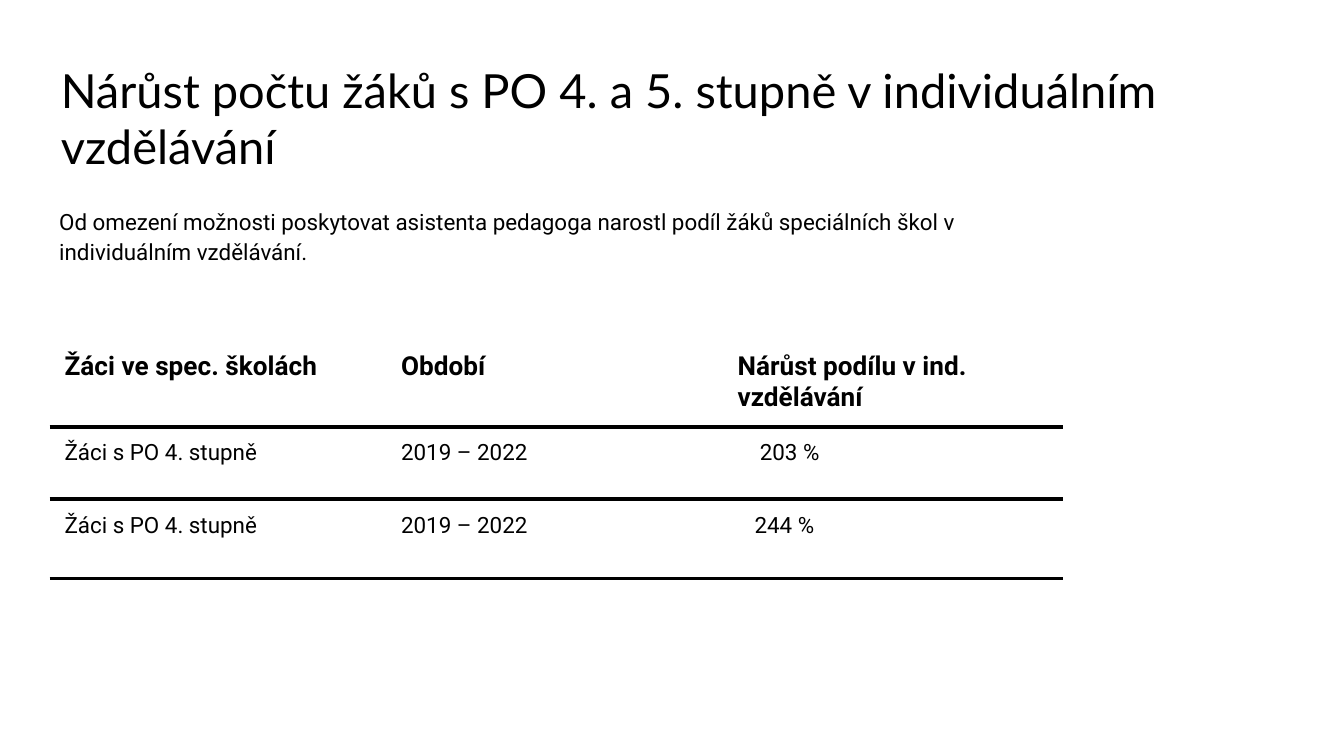
from lxml.etree import SubElement
from pptx import Presentation
from pptx.dml.color import RGBColor
from pptx.oxml.ns import qn
from pptx.util import Cm, Pt

BLACK, WHITE = "000000", "FFFFFF"
ROWS = [
    ("Žáci ve spec. školách", "Období", "Nárůst podílu v ind. vzdělávání"),
    ("Žáci s PO 4. stupně", "2019 – 2022", "203 %"),
    ("Žáci s PO 4. stupně", "2019 – 2022", "244 %"),
]
ROW_HEIGHTS = [1.65, 1.37, 1.5]
VALUE_INDENTS = [0, 0.42, 0.32]
COLUMN_WIDTH = 6.36
INSET = 0.25


def color(value):
    """Turn a hex string into a colour."""
    return RGBColor.from_string(value)


def style(p, size, font, bold=False):
    """Set the font of a paragraph."""
    p.font.size = Pt(size)
    p.font.name = font
    p.font.bold = bold
    p.font.color.rgb = color(BLACK)


def add_text(s, box, text, size, font):
    """Add a wrapped text box and return its paragraph."""
    tf = s.shapes.add_textbox(*map(Cm, box)).text_frame
    tf.word_wrap = True
    tf.margin_left = tf.margin_right = Cm(INSET)
    tf.margin_top = tf.margin_bottom = Cm(INSET)
    p = tf.paragraphs[0]
    p.text = text
    style(p, size, font)
    return p


def set_borders(cell, top):
    """Draw white sides, a black bottom and the given top colour."""
    tcPr = cell._tc.get_or_add_tcPr()
    edges = {"a:lnL": WHITE, "a:lnR": WHITE, "a:lnT": top, "a:lnB": BLACK}
    for tag, value in edges.items():
        ln = SubElement(tcPr, qn(tag), w=str(Pt(2.25)))
        fill = SubElement(ln, qn("a:solidFill"))
        SubElement(fill, qn("a:srgbClr"), val=value)


def fill_cell(cell, text, header, indent):
    """Write and format one table cell."""
    set_borders(cell, WHITE if header else BLACK)
    cell.fill.background()
    cell.margin_left = Cm(INSET + indent)
    cell.margin_right = cell.margin_top = cell.margin_bottom = Cm(INSET)
    cell.text = text
    style(cell.text_frame.paragraphs[0], 14 if header else 12, "Roboto", header)


def add_growth_table(s, left, top):
    """Add the table of growth by support level."""
    columns = len(ROWS[0])
    frame = s.shapes.add_table(len(ROWS), columns, Cm(left), Cm(top),
                               Cm(columns * COLUMN_WIDTH), Cm(sum(ROW_HEIGHTS)))
    table = frame.table
    table.first_row = table.horz_banding = False
    for column in table.columns:
        column.width = Cm(COLUMN_WIDTH)
    for i, texts in enumerate(ROWS):
        table.rows[i].height = Cm(ROW_HEIGHTS[i])
        for j, text in enumerate(texts):
            indent = VALUE_INDENTS[i] if j == columns - 1 else 0
            fill_cell(table.cell(i, j), text, i == 0, indent)


def main():
    """Build the slide and save it."""
    prs = Presentation()
    prs.slide_width, prs.slide_height = Cm(25.4), Cm(14.29)
    s = prs.slides.add_slide(prs.slide_layouts[6])
    add_text(s, (0.9, 0.91, 23.67, 1.6),
             "Nárůst počtu žáků s PO 4. a 5. stupně v individuálním vzdělávání",
             25.2, "Lato")
    p = add_text(s, (0.87, 3.6, 17.83, 9.07),
                 "Od omezení možnosti poskytovat asistenta pedagoga narostl podíl "
                 "žáků speciálních škol v individuálním vzdělávání.", 12, "Roboto")
    p.line_spacing = 1.15
    p.space_after = Pt(12)
    add_growth_table(s, 0.97, 6.38)
    prs.save("out.pptx")


if __name__ == "__main__":
    main()
